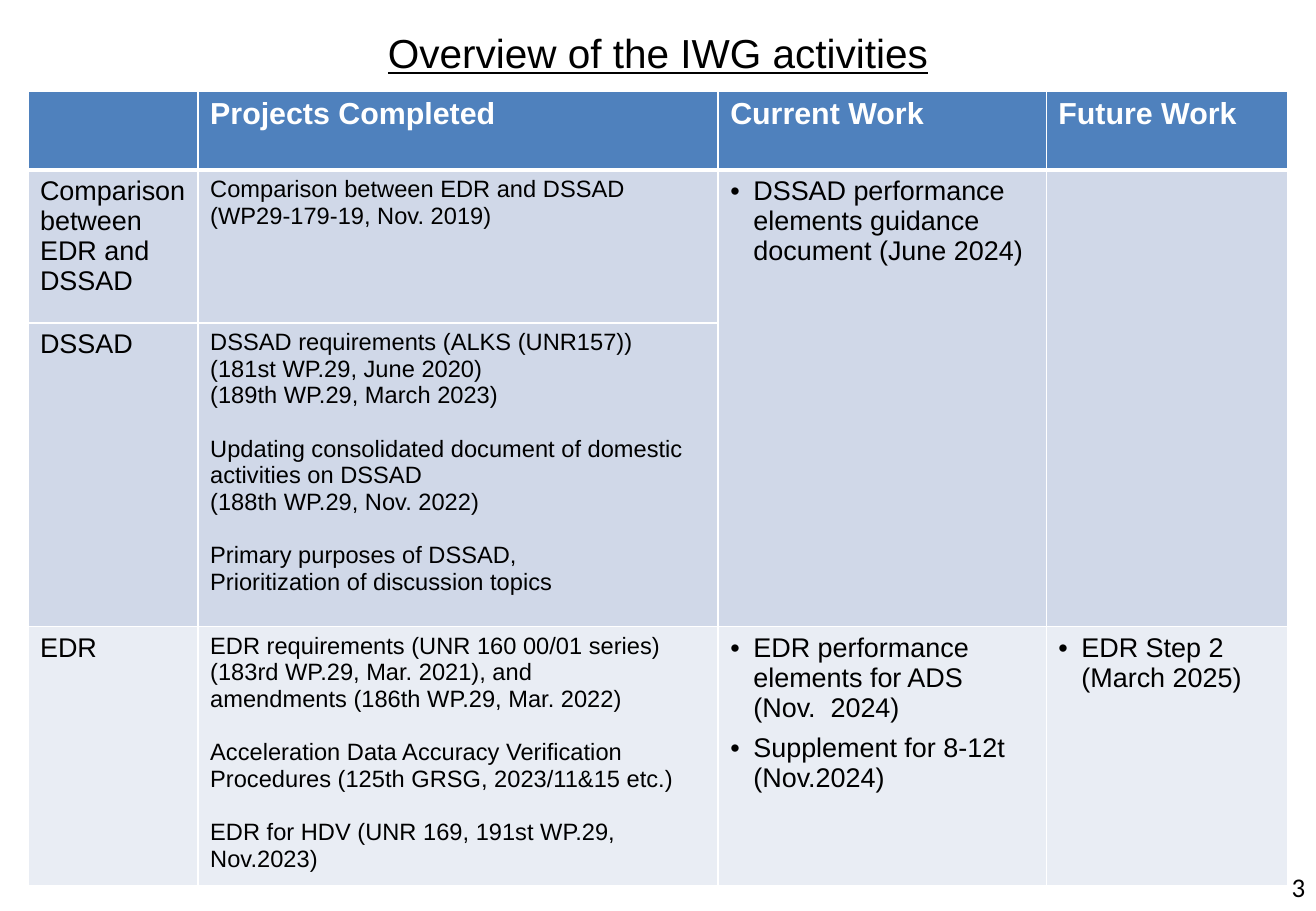
"""Build the IWG activities overview slide."""
from lxml.etree import SubElement
from pptx import Presentation
from pptx.dml.color import RGBColor
from pptx.enum.text import MSO_ANCHOR, MSO_AUTO_SIZE, PP_ALIGN
from pptx.oxml import parse_xml
from pptx.oxml.ns import nsdecls, qn
from pptx.util import Inches, Pt

BLACK = RGBColor(0x00, 0x00, 0x00)
WHITE = RGBColor(0xFF, 0xFF, 0xFF)
HEADER_BLUE = RGBColor(0x4F, 0x81, 0xBD)
BAND_BLUE = RGBColor(0xD0, 0xD8, 0xE8)
BAND_PALE = RGBColor(0xE9, 0xED, 0xF4)

COLUMN_WIDTHS = (1.4, 4.28, 2.7, 1.99)
ROW_HEIGHTS = (0.65, 1.26, 2.5, 2.13)
ROW_FILLS = (HEADER_BLUE, BAND_BLUE, BAND_BLUE, BAND_PALE)

HEADINGS = ("", "Projects Completed", "Current Work", "Future Work")
TOPICS = ("Comparison between EDR and DSSAD", "DSSAD", "EDR")
COMPLETED = (
    [["Comparison between EDR and DSSAD", "(WP29-179-19, Nov. 2019)"]],
    [
        ["DSSAD requirements (ALKS (UNR157))",
         "(181st WP.29, June 2020)",
         "(189th WP.29, March 2023)"],
        ["Updating consolidated document of domestic activities on DSSAD",
         "(188th WP.29, Nov. 2022)"],
        ["Primary purposes of DSSAD,", "Prioritization of discussion topics"],
    ],
    [
        ["EDR requirements (UNR 160 00/01 series) (183rd WP.29, Mar. 2021), and",
         "amendments (186th WP.29, Mar. 2022)"],
        ["Acceleration Data Accuracy Verification Procedures "
         "(125th GRSG, 2023/11&15 etc.)"],
        ["EDR for HDV (UNR 169, 191st WP.29, Nov.2023)"],
    ],
)
PLANNED = {
    (1, 2): ["DSSAD performance elements guidance document (June 2024)"],
    (3, 2): ["EDR performance elements for ADS  (Nov.  2024)",
             "Supplement for 8-12t (Nov.2024)"],
    (3, 3): ["EDR Step 2 (March 2025)"],
}


def write(frame, text, size=16, font="Arial", color=BLACK, bold=False,
          underline=False, align=PP_ALIGN.LEFT, before=0, bullet=False):
    """Write one formatted paragraph, filling the empty first one if there is one."""
    last = frame.paragraphs[-1]
    paragraph = frame.add_paragraph() if last.runs else last
    paragraph.alignment = align
    paragraph.space_before = Pt(before)
    if bullet:
        properties = paragraph._p.get_or_add_pPr()
        properties.set("marL", str(Inches(0.19)))
        properties.set("indent", str(-Inches(0.19)))
        SubElement(properties, qn("a:buFont")).set("typeface", "Arial")
        SubElement(properties, qn("a:buChar")).set("char", "•")
    run = paragraph.add_run()
    run.text = text
    run.font.size = Pt(size)
    run.font.name = font
    run.font.bold = bold
    run.font.underline = underline
    run.font.color.rgb = color


class OverviewSlide:
    """Hold the slide and its style, and add each kind of element."""

    def __init__(self, presentation):
        self.slide = presentation.slides.add_slide(presentation.slide_layouts[5])
        self.border_color = WHITE

    def title(self, text, left, top, width, height):
        """Move the title placeholder and fill it."""
        heading = self.slide.shapes.title
        heading.left, heading.top = Inches(left), Inches(top)
        heading.width, heading.height = Inches(width), Inches(height)
        frame = heading.text_frame
        frame.auto_size = MSO_AUTO_SIZE.NONE
        frame.vertical_anchor = MSO_ANCHOR.MIDDLE
        frame.margin_left = frame.margin_right = 0
        frame.margin_top = frame.margin_bottom = 0
        write(frame, text, size=24, underline=True, align=PP_ALIGN.CENTER)

    def page_number(self, text, left, top, width, height):
        """Add the page number in the corner."""
        corner = self.slide.shapes.add_textbox(
            Inches(left), Inches(top), Inches(width), Inches(height))
        frame = corner.text_frame
        frame.word_wrap = True
        frame.vertical_anchor = MSO_ANCHOR.MIDDLE
        write(frame, text, font="Calibri", align=PP_ALIGN.RIGHT)

    def table(self, left, top):
        """Add the empty, coloured table grid."""
        grid = self.slide.shapes.add_table(
            len(ROW_HEIGHTS), len(COLUMN_WIDTHS), Inches(left), Inches(top),
            Inches(sum(COLUMN_WIDTHS)), Inches(sum(ROW_HEIGHTS))).table
        grid.horz_banding = False
        for column, width in zip(grid.columns, COLUMN_WIDTHS):
            column.width = Inches(width)
        for index, (row, height) in enumerate(zip(grid.rows, ROW_HEIGHTS)):
            row.height = Inches(height)
            for cell in row.cells:
                cell.fill.solid()
                cell.fill.fore_color.rgb = ROW_FILLS[index]
                self.borders(cell, top=3 if index == 1 else 1,
                             bottom=3 if index == 0 else 1)
        return grid

    def borders(self, cell, top, bottom):
        """Draw the four borders of a cell, with widths in points."""
        properties = cell._tc.get_or_add_tcPr()
        sides = (("lnL", 1), ("lnR", 1), ("lnT", top), ("lnB", bottom))
        for position, (side, width) in enumerate(sides):
            properties.insert(position, parse_xml(
                f'<a:{side} {nsdecls("a")} w="{Pt(width)}"><a:solidFill>'
                f'<a:srgbClr val="{self.border_color}"/></a:solidFill></a:{side}>'))


def main():
    """Build and save the slide."""
    presentation = Presentation()
    presentation.slide_width = Inches(10.83)
    presentation.slide_height = Inches(7.5)
    overview = OverviewSlide(presentation)
    overview.title("Overview of the IWG activities", 0.54, 0.2, 9.75, 0.46)
    activities = overview.table(0.23, 0.75)

    for column, heading in enumerate(HEADINGS):
        if heading:
            write(activities.cell(0, column).text_frame, heading,
                  size=18, color=WHITE, bold=True)
    for row, (topic, projects) in enumerate(zip(TOPICS, COMPLETED), start=1):
        write(activities.cell(row, 0).text_frame, topic)
        for project_index, project in enumerate(projects):
            for line_index, line in enumerate(project):
                starts_later_project = project_index > 0 and line_index == 0
                write(activities.cell(row, 1).text_frame, line, size=14,
                      before=16 if starts_later_project else 0)
    for column in (2, 3):
        activities.cell(1, column).merge(activities.cell(2, column))
    for position, tasks in PLANNED.items():
        for task_index, task in enumerate(tasks):
            write(activities.cell(*position).text_frame, task,
                  before=6 if task_index else 0, bullet=True)

    overview.page_number("3", 8.31, 7.1, 2.53, 0.4)
    presentation.save("out.pptx")


if __name__ == "__main__":
    main()
